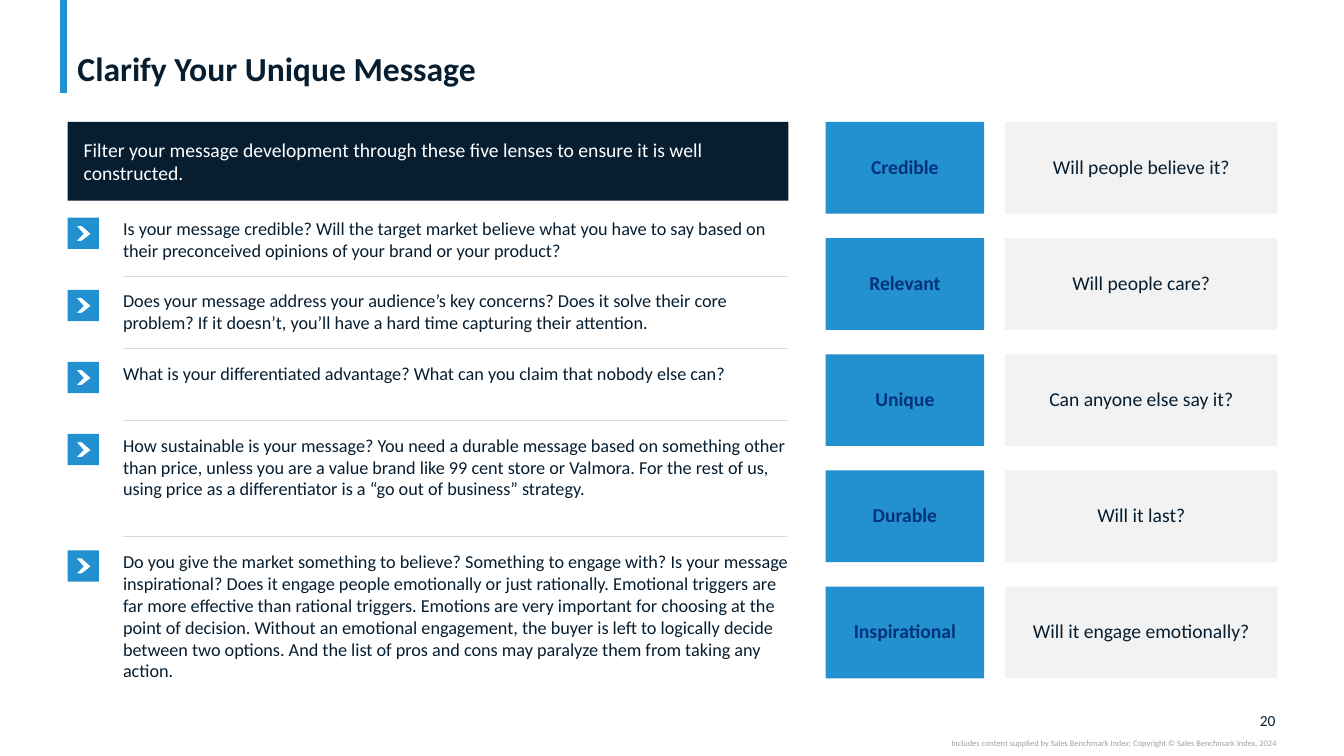
"""Build the "Clarify Your Unique Message" slide."""
from lxml.etree import SubElement
from pptx import Presentation
from pptx.dml.color import RGBColor
from pptx.enum.shapes import MSO_CONNECTOR, MSO_SHAPE
from pptx.enum.text import MSO_ANCHOR, PP_ALIGN
from pptx.oxml.ns import qn
from pptx.util import Inches, Pt

NAVY = RGBColor(0x07, 0x1E, 0x31)
BLUE = RGBColor(0x23, 0x91, 0xCF)
DEEP_BLUE = RGBColor(0x03, 0x32, 0x7C)
WHITE = RGBColor(0xFF, 0xFF, 0xFF)
PALE_GRAY = RGBColor(0xF2, 0xF2, 0xF2)
RULE_GRAY = RGBColor(0xD9, 0xD9, 0xD9)
NOTE_GRAY = RGBColor(0xA0, 0xA0, 0xA0)

TITLE = "Clarify Your Unique Message"
BANNER = "Filter your message development through these five lenses to ensure it is well constructed."
PAGE_NUMBER = "20"
COPYRIGHT = "Includes content supplied by Sales Benchmark Index; Copyright © Sales Benchmark Index, 2024"

QUESTIONS = [
    ("Is your message credible? Will the target market believe what you have to say based on "
     "their preconceived opinions of your brand or your product?", 0.44),
    ("Does your message address your audience’s key concerns? Does it solve their core problem? "
     "If it doesn’t, you’ll have a hard time capturing their attention.", 0.44),
    ("What is your differentiated advantage? What can you claim that nobody else can?", 0.44),
    ("How sustainable is your message? You need a durable message based on something other than "
     "price, unless you are a value brand like 99 cent store or Valmora. For the rest of us, using "
     "price as a differentiator is a “go out of business” strategy.", 0.88),
    ("Do you give the market something to believe? Something to engage with? Is your message "
     "inspirational? Does it engage people emotionally or just rationally. Emotional triggers are "
     "far more effective than rational triggers. Emotions are very important for choosing at the "
     "point of decision. Without an emotional engagement, the buyer is left to logically decide "
     "between two options. And the list of pros and cons may paralyze them from taking any action.",
     1.31),
]
LENSES = [
    ("Credible", "Will people believe it?"),
    ("Relevant", "Will people care?"),
    ("Unique", "Can anyone else say it?"),
    ("Durable", "Will it last?"),
    ("Inspirational", "Will it engage emotionally?"),
]

LEFT, CONTENT_TOP = 0.67, 1.21
QUESTION_LEFT, QUESTION_TOP, QUESTION_WIDTH = 1.22, 2.16, 6.59
QUESTION_GAP = 0.55 / 2
CARD_HEIGHT, CARD_BOTTOM = 0.91, 6.73
CARD_PITCH = (CARD_BOTTOM - CARD_HEIGHT - CONTENT_TOP) / (len(LENSES) - 1)
ICON_SQUARE = [(0, 0), (31, 0), (31, 31), (0, 31)]
ICON_CHEVRON = [(9, 8), (14, 8), (23, 15.5), (14, 23), (9, 23), (16.5, 15.5)]


def write(shape, text, size, color, bold=False, align=PP_ALIGN.LEFT,
          anchor=MSO_ANCHOR.TOP, margins=(0, 0), spacing=1.0):
    frame = shape.text_frame
    frame.word_wrap = True
    frame.vertical_anchor = anchor
    frame.margin_left = frame.margin_right = Inches(margins[0])
    frame.margin_top = frame.margin_bottom = Inches(margins[1])
    paragraph = frame.paragraphs[0]
    paragraph.text = text
    paragraph.alignment = align
    paragraph.line_spacing = spacing
    font = paragraph.font
    font.name, font.size, font.bold = "Calibri", Pt(size), bold
    font.color.rgb = color


def add_text(slide, box, text, size, color, **style):
    shape = slide.shapes.add_textbox(*map(Inches, box))
    write(shape, text, size, color, **style)


def paint(shape, color):
    shape.shadow.inherit = False
    shape.fill.solid()
    shape.fill.fore_color.rgb = color
    shape.line.fill.background()


def add_panel(slide, box, fill, text, color, **style):
    shape = slide.shapes.add_shape(MSO_SHAPE.RECTANGLE, *map(Inches, box))
    paint(shape, fill)
    write(shape, text, 14, color, anchor=MSO_ANCHOR.MIDDLE, margins=(0.16, 0.16), **style)


def add_rule(slide, start, end, color, width):
    rule = slide.shapes.add_connector(MSO_CONNECTOR.STRAIGHT, *map(Inches, start + end))
    rule.line.color.rgb = color
    rule.line.width = Pt(width)
    SubElement(rule._element.spPr, qn("a:effectLst"))


def add_icon(slide, left, top):
    builder = slide.shapes.build_freeform(*ICON_SQUARE[0], scale=Inches(0.01))
    builder.add_line_segments(ICON_SQUARE[1:])
    builder.move_to(*ICON_CHEVRON[0])
    builder.add_line_segments(ICON_CHEVRON[1:])
    paint(builder.convert_to_shape(Inches(left), Inches(top)), BLUE)


def add_questions(slide):
    top = QUESTION_TOP
    for index, (question, height) in enumerate(QUESTIONS):
        if index:
            divider = top - QUESTION_GAP / 2
            add_rule(slide, (QUESTION_LEFT, divider),
                     (QUESTION_LEFT + QUESTION_WIDTH, divider), RULE_GRAY, 0.5)
        add_icon(slide, LEFT, top)
        add_text(slide, (QUESTION_LEFT, top, QUESTION_WIDTH, height), question, 13, NAVY)
        top += height + QUESTION_GAP


def add_lenses(slide):
    for index, (lens, test) in enumerate(LENSES):
        top = CONTENT_TOP + index * CARD_PITCH
        add_panel(slide, (8.19, top, 1.57, CARD_HEIGHT), BLUE, lens, DEEP_BLUE,
                  bold=True, align=PP_ALIGN.CENTER, spacing=0.9)
        add_panel(slide, (9.97, top, 2.7, CARD_HEIGHT), PALE_GRAY, test, NAVY,
                  align=PP_ALIGN.CENTER, spacing=0.9)


def main():
    presentation = Presentation()
    presentation.slide_width, presentation.slide_height = Inches(13.33), Inches(7.5)
    slide = presentation.slides.add_slide(presentation.slide_layouts[6])
    add_rule(slide, (0.63, 0), (0.63, 0.92), BLUE, 5)
    add_text(slide, (LEFT, 0.04, 11.99, 0.84), TITLE, 24, NAVY, bold=True,
             anchor=MSO_ANCHOR.BOTTOM, margins=(0.1, 0), spacing=0.9)
    add_panel(slide, (LEFT, CONTENT_TOP, 7.15, 0.78), NAVY, BANNER, WHITE)
    add_questions(slide)
    add_lenses(slide)
    add_text(slide, (12.32, 7.05, 0.33, 0.19), PAGE_NUMBER, 11, NAVY,
             align=PP_ALIGN.RIGHT, anchor=MSO_ANCHOR.MIDDLE)
    add_text(slide, (7.5, 7.32, 5.16, 0.1), COPYRIGHT, 6, NOTE_GRAY, align=PP_ALIGN.RIGHT)
    presentation.save("out.pptx")


if __name__ == "__main__":
    main()
